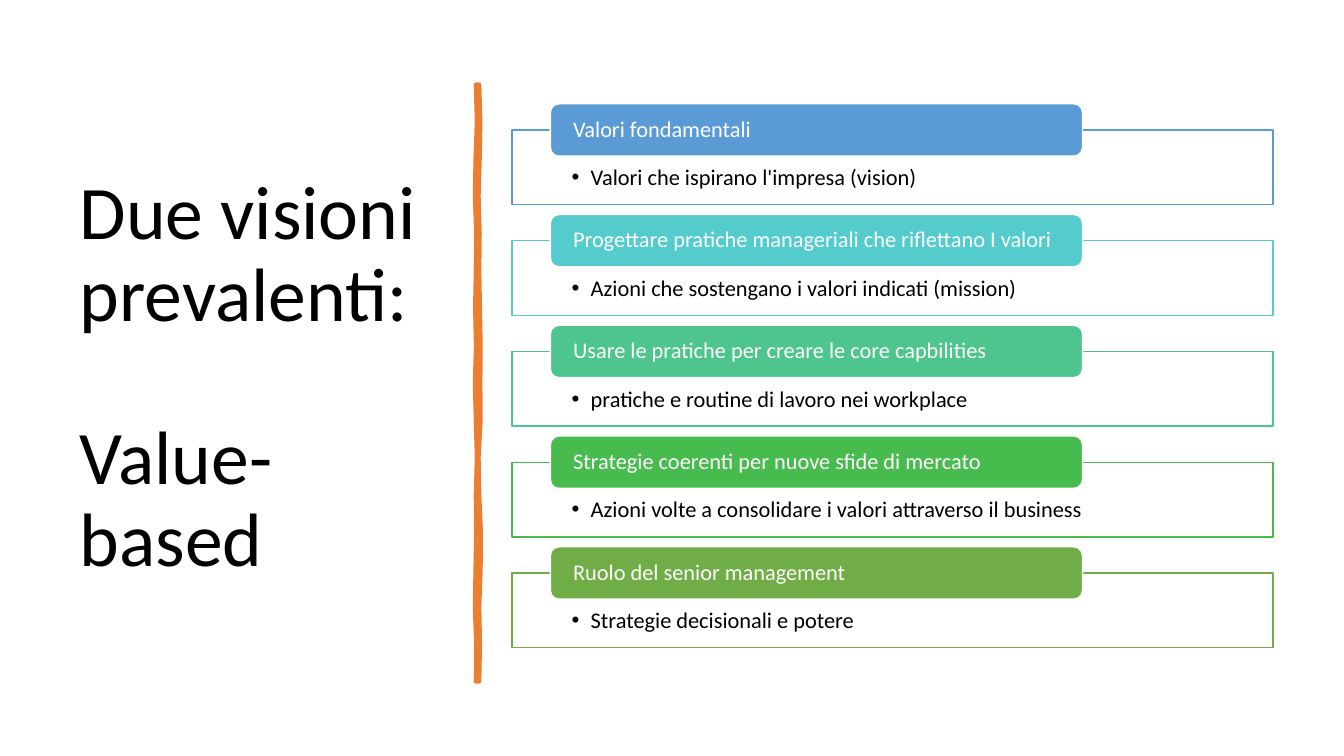
"""Build a slide with a title, a brush stroke and five labelled value boxes."""
from lxml import etree
from pptx import Presentation
from pptx import util as u
from pptx.dml.color import RGBColor
from pptx.enum import shapes, text
from pptx.oxml.ns import qn

WIDTH, HEIGHT = u.Inches(13.33), u.Inches(7.5)
BLACK = RGBColor(0x00, 0x00, 0x00)
WHITE = RGBColor(0xFF, 0xFF, 0xFF)
ORANGE = RGBColor(0xED, 0x7D, 0x31)
BLUE = RGBColor(0x5B, 0x9B, 0xD5)
TURQUOISE = RGBColor(0x54, 0xCC, 0xCD)
MINT = RGBColor(0x4D, 0xC5, 0x8D)
GREEN = RGBColor(0x48, 0xBB, 0x4F)
OLIVE = RGBColor(0x70, 0xAD, 0x47)

STEPS = [
    (BLUE, "Valori fondamentali", "Valori che ispirano l'impresa (vision)"),
    (TURQUOISE, "Progettare pratiche manageriali che riflettano I valori",
     "Azioni che sostengano i valori indicati (mission)"),
    (MINT, "Usare le pratiche per creare le core capbilities",
     "pratiche e routine di lavoro nei workplace"),
    (GREEN, "Strategie coerenti per nuove sfide di mercato",
     "Azioni volte a consolidare i valori attraverso il business"),
    (OLIVE, "Ruolo del senior management", "Strategie decisionali e potere"),
]
STEP_PITCH = 14.65
STROKE_CENTRE, STROKE_TOP, STROKE_BOTTOM = 35.55, 11.2, 90.13
LEFT_EDGE = [-0.13, -0.05, -0.15, -0.2, -0.1, -0.13, -0.18, -0.12, -0.2,
             -0.13, -0.05, -0.13, -0.1, -0.15, -0.2, -0.1, -0.13]
RIGHT_EDGE = [0.1, 0.18, 0.13, 0.05, 0.13, 0.1, 0.15, 0.2, 0.18,
              0.2, 0.05, 0.1, 0.22, 0.2, 0.1, 0.15, 0.1]


def across(columns):
    """Convert hundredths of the slide width to a length."""
    return round(WIDTH * columns / 100)


def down(rows):
    """Convert hundredths of the slide height to a length."""
    return round(HEIGHT * rows / 100)


def write(para, words, size=16, color=BLACK, bullet=False, before=0):
    """Put formatted words in a paragraph."""
    if bullet:
        props = para._p.get_or_add_pPr()
        indent = u.Inches(0.19)
        props.set("marL", str(indent))
        props.set("indent", str(-indent))
        etree.SubElement(props, qn("a:buFont"), typeface="Arial")
        etree.SubElement(props, qn("a:buChar"), char="•")
    para.alignment = text.PP_ALIGN.LEFT
    para.line_spacing = 0.9
    para.space_before = u.Pt(before)
    span = para.add_run()
    span.text = words
    span.font.name = "Calibri"
    span.font.size = u.Pt(size)
    span.font.color.rgb = color


def paint(shape, fill, line, weight):
    """Set a shape's fill and outline and drop its shadow."""
    shape.shadow.inherit = False
    shape.fill.solid()
    shape.fill.fore_color.rgb = fill
    shape.line.color.rgb = line
    shape.line.width = u.Pt(weight)


def add_box(page, kind, place, fill, line, insets, anchor):
    """Add a painted shape and return it ready for text."""
    left, top, width, height = place
    box = page.shapes.add_shape(kind, across(left), down(top), across(width), down(height))
    paint(box, fill, line, 1)
    frame = box.text_frame
    frame.word_wrap = True
    frame.vertical_anchor = anchor
    (frame.margin_left, frame.margin_top,
     frame.margin_right, frame.margin_bottom) = map(u.Inches, insets)
    return box


def add_step(page, index, color, label, detail):
    """Add one outlined detail box with its coloured label."""
    offset = index * STEP_PITCH
    panel = add_box(page, shapes.MSO_SHAPE.RECTANGLE, (38.1, 17.2 + offset, 56.62, 9.87),
                    WHITE, color, (0.59, 0.36, 0.59, 0.12), text.MSO_ANCHOR.TOP)
    tint = panel._element.spPr.find(qn("a:solidFill"))[0]
    etree.SubElement(tint, qn("a:alpha"), val="90000")
    write(panel.text_frame.paragraphs[0], detail, bullet=True)
    tab = add_box(page, shapes.MSO_SHAPE.ROUNDED_RECTANGLE, (40.95, 13.73 + offset, 39.6, 6.93),
                  color, WHITE, (0.2, 0, 0.2, 0), text.MSO_ANCHOR.MIDDLE)
    write(tab.text_frame.paragraphs[0], label, color=WHITE)


def add_stroke(page):
    """Add the wavy vertical brush stroke."""
    gap = (STROKE_BOTTOM - STROKE_TOP) / (len(LEFT_EDGE) - 1)

    def trace(edge):
        return [(across(STROKE_CENTRE + shift), down(STROKE_TOP + i * gap))
                for i, shift in enumerate(edge)]

    outline = trace(RIGHT_EDGE) + trace(LEFT_EDGE)[::-1]
    builder = page.shapes.build_freeform(*outline[0])
    builder.add_line_segments(outline[1:], close=True)
    paint(builder.convert_to_shape(), ORANGE, ORANGE, 3.25)


def add_title(page):
    """Place and fill the title."""
    title = page.shapes.title
    title.left, title.top = across(5.18), down(9.33)
    title.width, title.height = across(29.25), down(81.47)
    frame = title.text_frame
    frame.word_wrap = True
    frame.auto_size = text.MSO_AUTO_SIZE.NONE
    frame.vertical_anchor = text.MSO_ANCHOR.MIDDLE
    write(frame.paragraphs[0], "Due visioni prevalenti:", size=54)
    write(frame.add_paragraph(), "Value-based", size=54, before=58)


def main():
    """Build and save the deck."""
    deck = Presentation()
    deck.slide_width, deck.slide_height = WIDTH, HEIGHT
    page = deck.slides.add_slide(deck.slide_layouts[5])
    add_title(page)
    add_stroke(page)
    for index, step in enumerate(STEPS):
        add_step(page, index, *step)
    deck.save("out.pptx")


if __name__ == "__main__":
    main()
